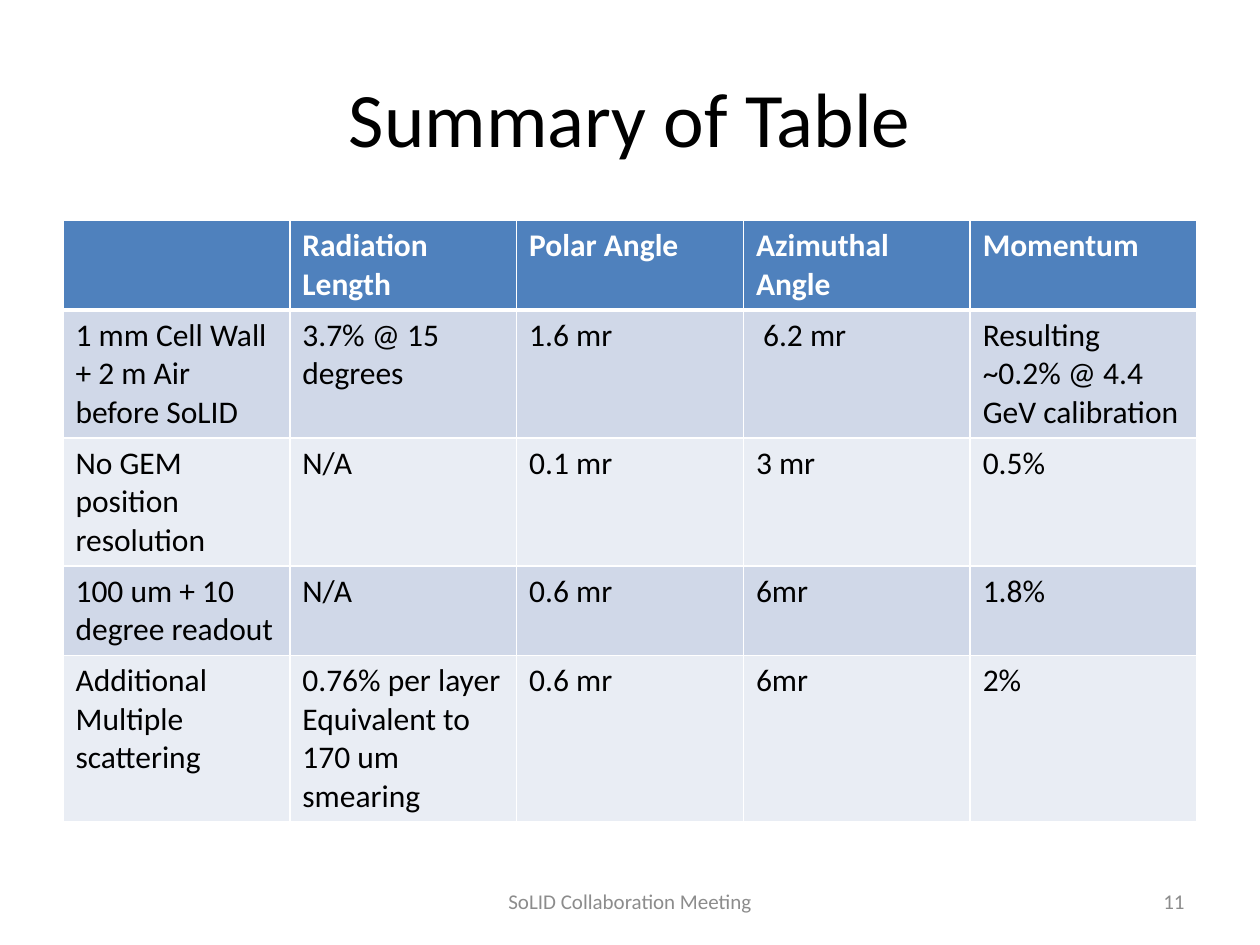
"""Build the summary table slide of angular and momentum resolutions."""
from lxml.etree import SubElement
from pptx import Presentation
from pptx.dml.color import RGBColor
from pptx.enum.text import MSO_ANCHOR, PP_ALIGN
from pptx.oxml.ns import qn
from pptx.util import Pt

COLORS = {"text": "000000", "white": "FFFFFF", "muted": "8C8C8C",
          "header": "4F81BD", "odd": "D0D8E8", "even": "E9EDF4"}
FONT = "Calibri"
ROWS = [
    ["", "Radiation Length", "Polar Angle", "Azimuthal Angle", "Momentum"],
    ["1 mm Cell Wall + 2 m Air before SoLID", "3.7% @ 15 degrees", "1.6 mr",
     " 6.2 mr", "Resulting ~0.2% @ 4.4 GeV calibration"],
    ["No GEM position resolution", "N/A", "0.1 mr", "3 mr", "0.5%"],
    ["100 um + 10 degree readout", "N/A", "0.6 mr", "6mr", "1.8%"],
    ["Additional Multiple scattering",
     "0.76% per layer\nEquivalent to 170 um smearing", "0.6 mr", "6mr", "2%"],
]
ROW_LINES = [2, 3, 3, 2, 4]
LINE_HEIGHT, CELL_PADDING = 21.95, 7.2
LEFT, TOP, WIDTH = 36, 126, 648
LABELS = [
    ("Summary of Table", (36, 21.6, 648, 90), 44, "text", PP_ALIGN.CENTER),
    ("SoLID Collaboration Meeting", (246, 500.4, 228, 28.8), 12, "muted", PP_ALIGN.CENTER),
    ("11", (516, 500.4, 168, 28.8), 12, "muted", PP_ALIGN.RIGHT),
]


def rgb(name):
    return RGBColor.from_string(COLORS[name])


def write(tf, text, size, color, bold=False, align=PP_ALIGN.LEFT):
    for i, line in enumerate(text.split("\n")):
        p = tf.add_paragraph() if i else tf.paragraphs[0]
        p.alignment = align
        p.font.size = Pt(size)
        if line:
            r = p.add_run()
            r.text = line
            r.font.name, r.font.size, r.font.bold = FONT, Pt(size), bold
            r.font.color.rgb = rgb(color)


def add_label(slide, text, box, size, color, align):
    tf = slide.shapes.add_textbox(*map(Pt, box)).text_frame
    tf.word_wrap = True
    tf.vertical_anchor = MSO_ANCHOR.MIDDLE
    write(tf, text, size, color, align=align)


def set_borders(cell, widths):
    tc_pr = cell._tc.get_or_add_tcPr()
    for side, width in widths.items():
        ln = SubElement(tc_pr, qn(f"a:ln{side}"), w=str(Pt(width)))
        fill = SubElement(ln, qn("a:solidFill"))
        SubElement(fill, qn("a:srgbClr"), val=COLORS["white"])


def add_summary(slide):
    heights = [n * LINE_HEIGHT + CELL_PADDING for n in ROW_LINES]
    table = slide.shapes.add_table(len(ROWS), len(ROWS[0]), Pt(LEFT), Pt(TOP),
                                   Pt(WIDTH), Pt(sum(heights))).table
    for col in table.columns:
        col.width = Pt(WIDTH / len(ROWS[0]))
    for i, row in enumerate(ROWS):
        table.rows[i].height = Pt(heights[i])
        header = i == 0
        fill = "header" if header else "odd" if i % 2 else "even"
        borders = {"L": 1, "R": 1, "T": 3 if i == 1 else 1, "B": 3 if header else 1}
        for j, text in enumerate(row):
            cell = table.cell(i, j)
            set_borders(cell, borders)
            cell.fill.solid()
            cell.fill.fore_color.rgb = rgb(fill)
            write(cell.text_frame, text, 18, "white" if header else "text", header)


def main():
    prs = Presentation()
    prs.slide_width, prs.slide_height = Pt(720), Pt(540)
    s = prs.slides.add_slide(prs.slide_layouts[6])
    add_summary(s)
    for label in LABELS:
        add_label(s, *label)
    prs.save("out.pptx")


if __name__ == "__main__":
    main()
